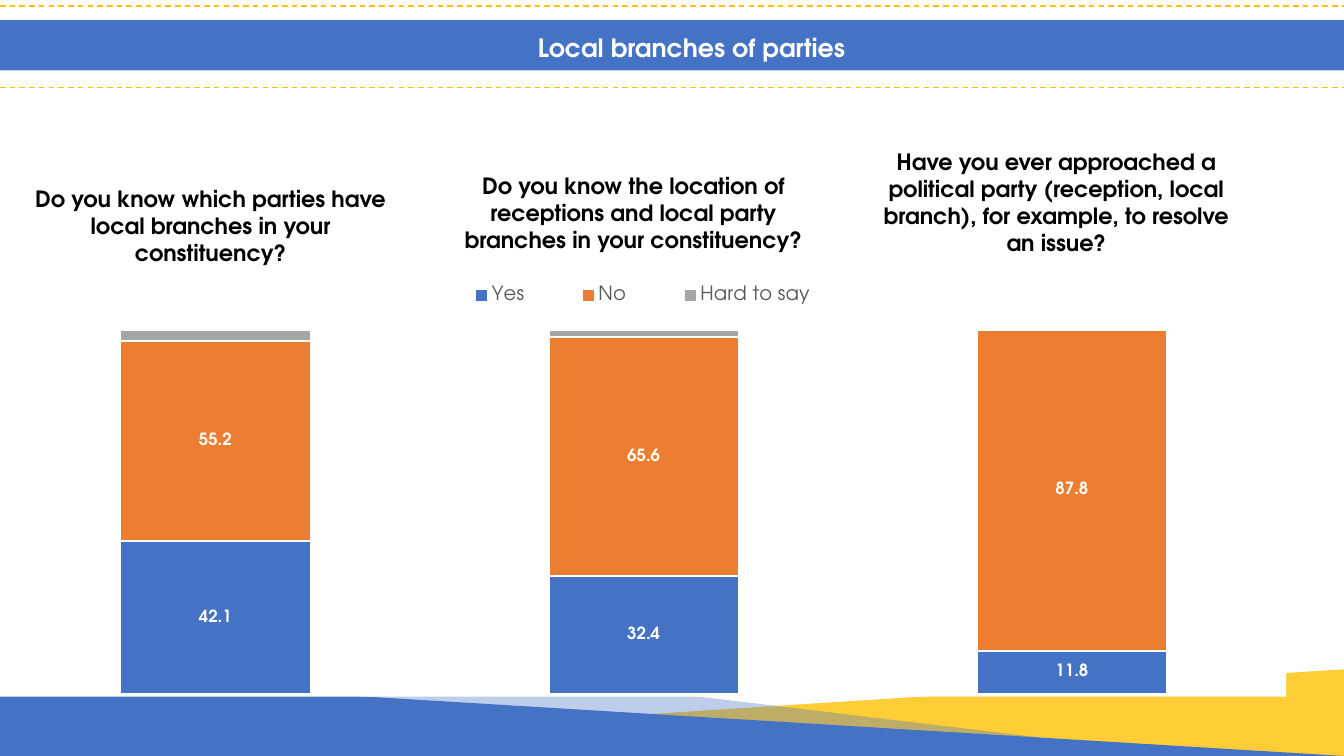
import pptx
import pptx.chart.data
import pptx.dml.color
import pptx.enum.chart
import pptx.enum.dml
import pptx.enum.shapes
import pptx.enum.text
import pptx.oxml
import pptx.oxml.ns
import pptx.util

Inches = pptx.util.Inches
Pt = pptx.util.Pt
SHAPE = pptx.enum.shapes.MSO_SHAPE
ANCHOR = pptx.enum.text.MSO_ANCHOR

FONT = "TeX Gyre Adventor"
SLIDE_WIDTH = 40 / 3
COLORS = {
    "blue": "4472C4",
    "gold": "FFC000",
    "orange": "ED7D31",
    "gray": "A5A5A5",
    "legend": "595959",
    "white": "FFFFFF",
    "black": "000000",
}

TITLE_FORMAT = {"size": Pt(18), "bold": True}
QUESTION_FORMAT = {"size": Pt(16), "bold": True}
LABEL_FORMAT = {"size": Pt(12), "bold": True}
LEGEND_FORMAT = {"size": Pt(14)}
CHART_FORMAT = {"size": Pt(10.5)}

QUESTIONS = [
    ("Do you know which parties have local branches in your constituency?",
     (0.21, 1.79, 3.76, 0.91)),
    ("Do you know the location of receptions and local party branches in your constituency?",
     (4.33, 1.66, 3.91, 0.91)),
    ("Have you ever approached a political party (reception, local branch), "
     "for example, to resolve an issue?",
     (8.6, 1.42, 3.76, 1.18)),
]
# Name, values, colour, labelled
ANSWERS = [
    ("Yes", (42.1, 32.4, 11.8), "blue", True),
    ("No", (55.2, 65.6, 87.8), "orange", True),
    ("Hard to say", (3, 2, 0), "gray", False),
]


def rgb(name):
    return pptx.dml.color.RGBColor.from_string(COLORS[name])


def format_font(font, color, values):
    font.name = FONT
    font.color.rgb = rgb(color)
    for attribute, value in values.items():
        setattr(font, attribute, value)


def add_block(slide, kind, box, color, opacity=100):
    shape = slide.shapes.add_shape(kind, *map(Inches, box))
    shape.shadow.inherit = False
    shape.fill.solid()
    shape.fill.fore_color.rgb = rgb(color)
    shape.line.fill.background()
    if opacity < 100:
        color_element = shape.fill._xPr.find(".//" + pptx.oxml.ns.qn("a:srgbClr"))
        alpha = pptx.oxml.parse_xml(
            f'<a:alpha {pptx.oxml.ns.nsdecls("a")} val="{opacity * 1000}"/>')
        color_element.append(alpha)
    return shape


def add_wedge(slide, box, color, opacity=100, flipped=False):
    shape = add_block(slide, SHAPE.ISOSCELES_TRIANGLE, box, color, opacity)
    shape.adjustments[0] = 0
    if flipped:
        shape._element.spPr.find(pptx.oxml.ns.qn("a:xfrm")).set("flipH", "1")


def add_dashed_rule(slide, top):
    rule = slide.shapes.add_connector(
        pptx.enum.shapes.MSO_CONNECTOR.STRAIGHT,
        Inches(0), Inches(top), Inches(SLIDE_WIDTH), Inches(top))
    rule.line.color.rgb = rgb("gold")
    rule.line.width = Pt(1)
    rule.line.dash_style = pptx.enum.dml.MSO_LINE.DASH
    rule._element.spPr.append(
        pptx.oxml.parse_xml(f'<a:effectLst {pptx.oxml.ns.nsdecls("a")}/>'))


def add_text(slide, text, box, color, values, anchor=ANCHOR.TOP):
    frame = slide.shapes.add_textbox(*map(Inches, box)).text_frame
    frame.word_wrap = True
    frame.vertical_anchor = anchor
    paragraph = frame.paragraphs[0]
    paragraph.alignment = pptx.enum.text.PP_ALIGN.CENTER
    run = paragraph.add_run()
    run.text = text
    format_font(run.font, color, values)


def style_series(series, color, labelled):
    series.format.fill.solid()
    series.format.fill.fore_color.rgb = rgb(color)
    series.format.line.color.rgb = rgb("white")
    series.format.line.width = Pt(1.5)
    if labelled:
        labels = series.data_labels
        labels.show_value = True
        labels.number_format = "0.0"
        labels.number_format_is_linked = False
        format_font(labels.font, "white", LABEL_FORMAT)


def make_layout(sizes, target=""):
    parts = "".join(f'<c:{key} val="{value}"/>' for key, value in zip("xywh", sizes))
    return pptx.oxml.parse_xml(
        f'<c:layout {pptx.oxml.ns.nsdecls("c")}><c:manualLayout>{target}'
        f'<c:xMode val="edge"/><c:yMode val="edge"/>{parts}</c:manualLayout></c:layout>')


def set_chart_layout(chart):
    plot_area = chart._chartSpace.chart.plotArea
    legend = chart.legend._element
    for parent in (plot_area, legend):
        for layout in parent.findall(pptx.oxml.ns.qn("c:layout")):
            parent.remove(layout)
    plot_area.insert(0, make_layout((0.001, 0.177, 0.999, 0.817),
                                    '<c:layoutTarget val="inner"/>'))
    legend.find(pptx.oxml.ns.qn("c:legendPos")).addnext(
        make_layout((0.33, 0.06, 0.34, 0.08)))
    # White chart background without a border
    background = pptx.oxml.parse_xml(
        f'<c:spPr {pptx.oxml.ns.nsdecls("c", "a")}><a:solidFill>'
        f'<a:srgbClr val="{COLORS["white"]}"/></a:solidFill>'
        '<a:ln><a:noFill/></a:ln></c:spPr>')
    chart._chartSpace.chart.addnext(background)


def add_answer_chart(slide, box):
    data = pptx.chart.data.CategoryChartData(number_format="0.0")
    data.categories = ["1", "2", "3"]
    for name, values, _, _ in ANSWERS:
        data.add_series(name, values)
    chart = slide.shapes.add_chart(
        pptx.enum.chart.XL_CHART_TYPE.COLUMN_STACKED_100, *map(Inches, box), data).chart
    format_font(chart.font, "black", CHART_FORMAT)
    chart.has_title = False
    plot = chart.plots[0]
    for attribute, value in {"gap_width": 125, "overlap": 100,
                             "vary_by_categories": False}.items():
        setattr(plot, attribute, value)
    for axis in (chart.category_axis, chart.value_axis):
        axis.visible = False
        axis.has_major_gridlines = False
    for series, (_, _, color, labelled) in zip(plot.series, ANSWERS):
        style_series(series, color, labelled)
    chart.has_legend = True
    chart.legend.position = pptx.enum.chart.XL_LEGEND_POSITION.TOP
    chart.legend.include_in_layout = False
    format_font(chart.legend.font, "legend", LEGEND_FORMAT)
    set_chart_layout(chart)


def main():
    presentation = pptx.Presentation()
    presentation.slide_width = Inches(SLIDE_WIDTH)
    presentation.slide_height = Inches(7.5)
    slide = presentation.slides.add_slide(presentation.slide_layouts[6])

    # Footer wedges
    add_wedge(slide, (0, 6.64, SLIDE_WIDTH, 0.86), "gold", 79, flipped=True)
    add_wedge(slide, (0, 6.69, SLIDE_WIDTH, 0.81), "blue")
    add_wedge(slide, (0, 6.08, 11.85, 1.42), "blue", 35)

    # Title band
    add_block(slide, SHAPE.RECTANGLE, (0, 0.2, SLIDE_WIDTH, 0.5), "blue")
    for top in (0.06, 0.87):
        add_dashed_rule(slide, top)
    add_text(slide, "Local branches of parties", (1.23, 0.27, 11.26, 0.4),
             "white", TITLE_FORMAT, ANCHOR.MIDDLE)

    # Answers and their questions
    add_answer_chart(slide, (0, 2.49, 12.76, 4.42))
    for question, box in QUESTIONS:
        add_text(slide, question, box, "black", QUESTION_FORMAT)
    presentation.save("out.pptx")


if __name__ == "__main__":
    main()
